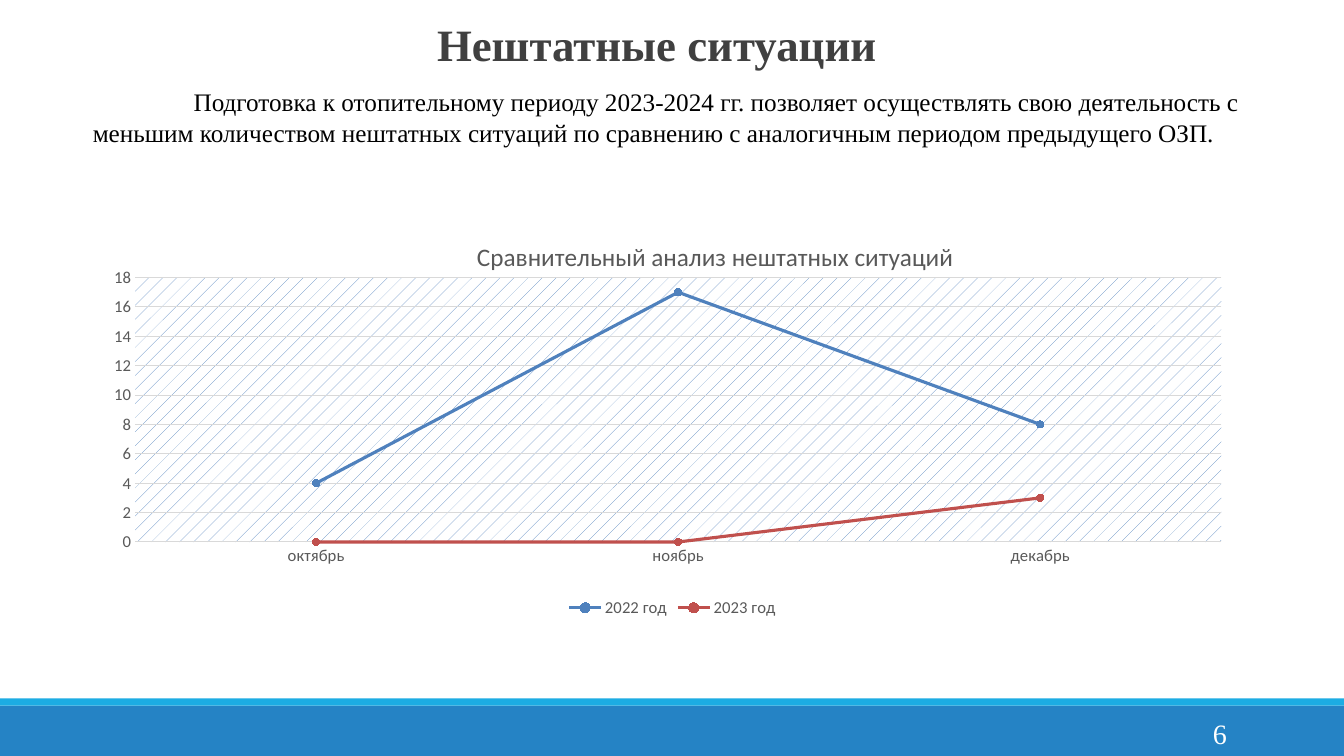
from dataclasses import dataclass

from lxml import etree
from pptx import Presentation
from pptx.chart.data import CategoryChartData
from pptx.dml.color import RGBColor
from pptx.enum.chart import XL_CHART_TYPE, XL_LEGEND_POSITION, XL_MARKER_STYLE, XL_TICK_MARK
from pptx.enum.shapes import MSO_SHAPE
from pptx.enum.text import PP_ALIGN
from pptx.oxml import parse_xml
from pptx.oxml.ns import nsdecls, qn
from pptx.util import Inches, Pt

LINE_MARKERS = XL_CHART_TYPE.LINE_MARKERS
BOTTOM = XL_LEGEND_POSITION.BOTTOM
CIRCLE = XL_MARKER_STYLE.CIRCLE
NO_TICK = XL_TICK_MARK.NONE
RECTANGLE = MSO_SHAPE.RECTANGLE
LEFT, CENTER = PP_ALIGN.LEFT, PP_ALIGN.CENTER


@dataclass(frozen=True)
class Theme:
    """Colours, fonts and type sizes of the slide."""
    serif: str = "Times New Roman"
    sans: str = "Calibri"
    white: str = "FFFFFF"
    black: str = "000000"
    heading: str = "404040"
    label: str = "595959"
    grid: str = "D9D9D9"
    footer: str = "2583C5"
    stripe: str = "1CACE3"
    series: tuple = ("4F81BD", "C0504D")
    title_size: float = 32
    body_size: float = 18
    number_size: float = 20
    label_size: float = 11.9


THEME = Theme()
MONTHS = ("октябрь", "ноябрь", "декабрь")
INCIDENTS = {"2022 год": (4, 17, 8), "2023 год": (0, 0, 3)}


def rgb(value):
    """Turn a hex string into a colour."""
    return RGBColor.from_string(value)


def style_font(font, size, color, name, bold=False):
    """Set size, colour, typeface and weight of a font."""
    font.size, font.name, font.bold = Pt(size), name, bold
    font.color.rgb = rgb(color)


def add_text(slide, box, text, *, size, color, bold=False, align=LEFT, indent=0):
    """Place one paragraph of text in a box without insets."""
    tf = slide.shapes.add_textbox(*map(Inches, box)).text_frame
    tf.word_wrap = True
    tf.margin_left = tf.margin_right = tf.margin_top = tf.margin_bottom = 0
    p = tf.paragraphs[0]
    p.alignment = align
    if indent:
        p._p.get_or_add_pPr().set("indent", str(Inches(indent)))
    r = p.add_run()
    r.text = text
    style_font(r.font, size, color, THEME.serif, bold)


def add_band(slide, box, color):
    """Draw a plain filled band."""
    s = slide.shapes.add_shape(RECTANGLE, *map(Inches, box))
    s.shadow.inherit = False
    s.fill.solid()
    s.fill.fore_color.rgb = rgb(color)
    s.line.fill.background()


def add_footer(slide, box, number):
    """Draw the footer with its stripe and page number."""
    x, y, w, h = box
    stripe = 0.07
    add_band(slide, (x, y + stripe, w, h - stripe), THEME.footer)
    add_band(slide, (x, y, w, stripe), THEME.stripe)
    add_text(slide, (x + 12.03, y + 0.18, 0.3, 0.34), number,
             size=THEME.number_size, color=THEME.white)


def add_header(slide, box):
    """Place the heading and the introduction below it."""
    x, y, w, h = box
    add_text(slide, (x, y, 11.33, 0.54), "Нештатные ситуации",
             size=THEME.title_size, color=THEME.heading, bold=True, align=CENTER)
    add_text(slide, (x + 0.07, y + 0.69, w - 0.07, h - 0.69),
             "Подготовка к отопительному периоду 2023-2024 гг. позволяет осуществлять "
             "свою деятельность с меньшим количеством нештатных ситуаций по сравнению "
             "с аналогичным периодом предыдущего ОЗП.",
             size=THEME.body_size, color=THEME.black, indent=1)


def manual_layout(**values):
    """Build a chart layout from fractions of the chart area."""
    layout = parse_xml(f"<c:layout {nsdecls('c')}><c:manualLayout/></c:layout>")
    for tag, val in values.items():
        etree.SubElement(layout[0], qn(f"c:{tag}")).set("val", str(val))
    return layout


def style_plot_area(chart):
    """Fix the inner plot box and give it a pattern fill."""
    area = chart._chartSpace.find(f".//{qn('c:plotArea')}")
    for old in area.findall(qn("c:layout")):
        area.remove(old)
    area.insert(0, manual_layout(layoutTarget="inner", xMode="edge", yMode="edge",
                                 x=0.03, y=0.146, w=0.95, h=0.656))
    area.append(parse_xml(
        f'<c:spPr {nsdecls("c", "a")}><a:pattFill prst="pct5">'
        f'<a:fgClr><a:srgbClr val="{THEME.series[0]}"/></a:fgClr>'
        f'<a:bgClr><a:srgbClr val="{THEME.white}"/></a:bgClr>'
        '</a:pattFill><a:ln><a:noFill/></a:ln></c:spPr>'))


def style_title(chart, text):
    """Write the chart title at its own place."""
    title = chart.chart_title
    p = title.text_frame.paragraphs[0]
    r = p.add_run()
    r.text = text
    style_font(r.font, THEME.body_size, THEME.label, THEME.sans)
    element = title._element
    for old in element.findall(qn("c:layout")):
        element.remove(old)
    element.find(qn("c:tx")).addnext(
        manual_layout(xMode="edge", yMode="edge", x=0.325, y=0.04))


def style_axes(chart):
    """Format both axes and the gridlines."""
    for axis in (chart.category_axis, chart.value_axis):
        axis.major_tick_mark = axis.minor_tick_mark = NO_TICK
        style_font(axis.tick_labels.font, THEME.label_size, THEME.label, THEME.sans)
    value_axis = chart.value_axis
    value_axis.minimum_scale, value_axis.maximum_scale = 0, 18
    value_axis.major_unit = 2
    value_axis.format.line.fill.background()
    for line in (chart.category_axis.format.line, value_axis.major_gridlines.format.line):
        line.color.rgb = rgb(THEME.grid)
        line.width = Pt(0.75)


def add_incident_chart(slide, box):
    """Draw the line chart that compares two years."""
    data = CategoryChartData()
    data.categories = MONTHS
    for name, values in INCIDENTS.items():
        data.add_series(name, values)
    chart = slide.shapes.add_chart(LINE_MARKERS, *map(Inches, box), data).chart
    style_font(chart.font, 10, THEME.black, THEME.sans)
    style_title(chart, "Сравнительный анализ нештатных ситуаций")
    style_axes(chart)
    style_plot_area(chart)
    chart.has_legend = True
    chart.legend.position = BOTTOM
    chart.legend.include_in_layout = False
    style_font(chart.legend.font, THEME.label_size, THEME.label, THEME.sans)
    plot = chart.plots[0]
    plot.vary_by_categories = False
    for series, color in zip(plot.series, THEME.series):
        series.smooth = False
        series.format.line.color.rgb = rgb(color)
        series.format.line.width = Pt(2.25)
        marker = series.marker
        marker.style, marker.size = CIRCLE, 5
        marker.format.fill.solid()
        marker.format.fill.fore_color.rgb = rgb(color)
        marker.format.line.color.rgb = rgb(color)


def main():
    """Build the slide and save it."""
    prs = Presentation()
    prs.slide_width, prs.slide_height = Inches(13.33), Inches(7.5)
    slide = prs.slides.add_slide(prs.slide_layouts[6])
    add_footer(slide, (0, 6.93, 13.33, 0.57), "6")
    add_header(slide, (0.85, 0.17, 11.99, 1.6))
    add_incident_chart(slide, (1, 2.17, 11.34, 4))
    prs.save("out.pptx")


if __name__ == "__main__":
    main()
